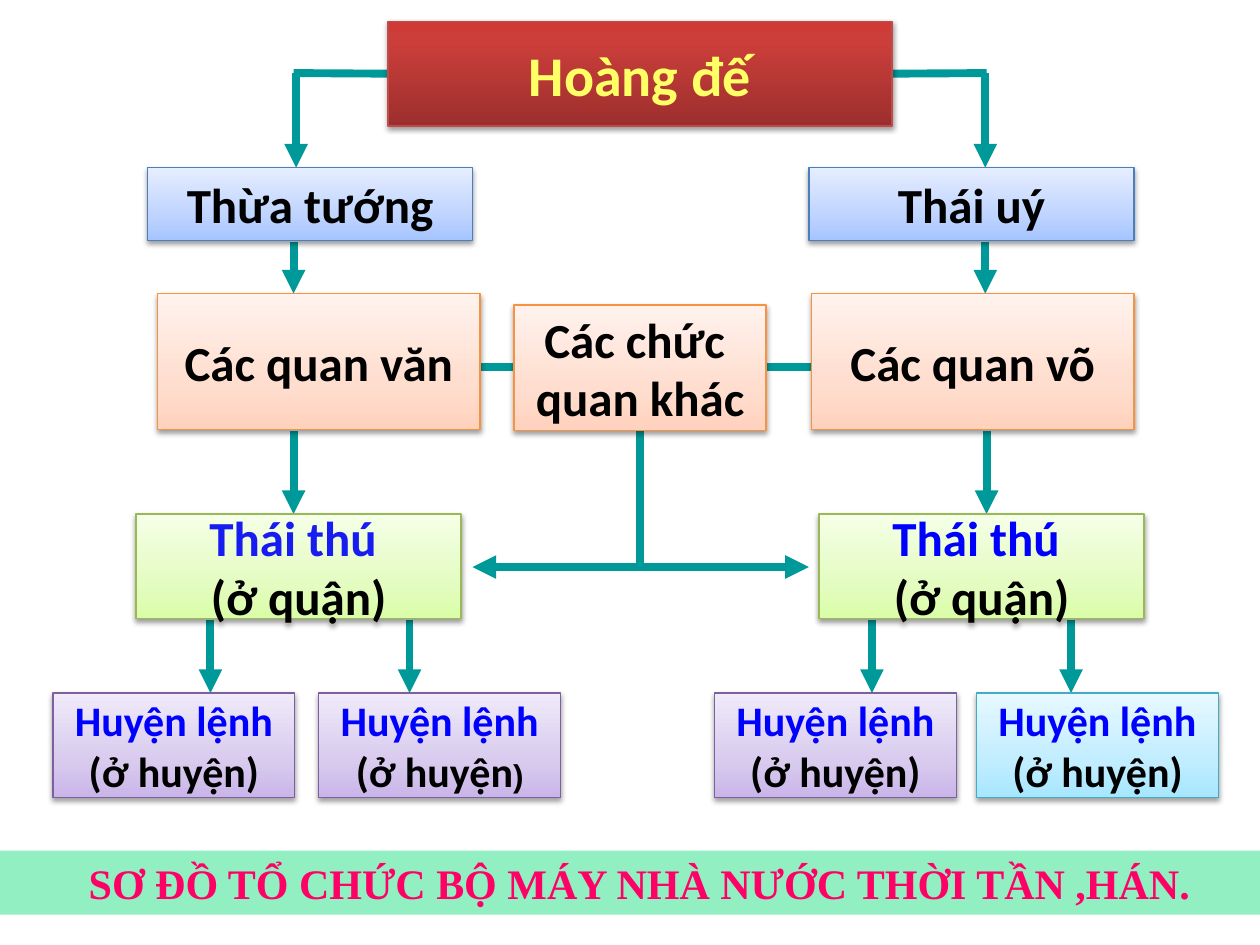
from copy import deepcopy

from lxml import etree
from pptx import Presentation
from pptx.dml.color import RGBColor
from pptx.enum.shapes import MSO_CONNECTOR, MSO_SHAPE
from pptx.enum.text import MSO_ANCHOR, MSO_AUTO_SIZE, PP_ALIGN
from pptx.oxml.ns import qn
from pptx.util import Inches, Pt

RECTANGLE = MSO_SHAPE.RECTANGLE
STRAIGHT = MSO_CONNECTOR.STRAIGHT
MIDDLE = MSO_ANCHOR.MIDDLE
CENTER = PP_ALIGN.CENTER
NO_AUTOFIT = MSO_AUTO_SIZE.NONE

BLACK, BLUE, TEAL = "000000", "0000FF", "009999"

# Gradient stops run from the bottom edge to the top edge.
RED_STYLE = ("BF4C48", ((0, "9C2F2D"), (0.8, "CB3E3A"), (1, "CE3B37")))
BLUE_STYLE = ("4B7EBC", ((0, "A4C4FF"), (0.35, "BFD4FF"), (1, "E6EEFF")))
ORANGE_STYLE = ("F69240", ((0, "FFD2BD"), (0.35, "FFDED0"), (1, "FFF2ED")))
GREEN_STYLE = ("98B955", ((0, "DAFDA7"), (0.35, "E4FCC2"), (1, "F5FFE7")))
PURPLE_STYLE = ("7D60A0", ((0, "C9B5E8"), (0.35, "D8CBEE"), (1, "F0EAF9")))
CYAN_STYLE = ("46AAC5", ((0, "A7E6FF"), (0.35, "C1EDFF"), (1, "E7F8FF")))


def rgb(hex_colour):
    return RGBColor.from_string(hex_colour)


def write(paragraph, text, size=28, colour=BLACK, font="Calibri"):
    paragraph.alignment = CENTER
    run = paragraph.add_run()
    run.text = text
    run.font.size = Pt(size)
    run.font.name = font
    run.font.bold = True
    run.font.color.rgb = rgb(colour)


presentation = Presentation()
presentation.slide_width = Inches(10)
presentation.slide_height = Inches(7.5)
slide = presentation.slides.add_slide(presentation.slide_layouts[5])

caption = slide.shapes.title
caption.left, caption.top = Inches(0), Inches(6.75)
caption.width, caption.height = Inches(10), Inches(0.51)
caption.fill.solid()
caption.fill.fore_color.rgb = rgb("91EFC2")
caption.text_frame.auto_size = NO_AUTOFIT
caption.text_frame.word_wrap = True
caption.text_frame.vertical_anchor = MIDDLE
caption.text_frame.margin_left = Inches(0.25)
write(caption.text_frame.paragraphs[0],
      "SƠ ĐỒ TỔ CHỨC BỘ MÁY NHÀ NƯỚC THỜI TẦN ,HÁN.",
      size=24, colour="FF0066", font="Times New Roman")

plain_links = [
    (3.08, 0.58, 2.33, 0.58),
    (7.83, 0.58, 7.08, 0.58),
    (3.81, 2.91, 6.44, 2.91),
    (5.08, 2.58, 5.08, 4.5),
]
arrow_links = [
    (2.35, 0.58, 2.35, 1.33),
    (7.82, 0.58, 7.82, 1.33),
    (2.33, 1.92, 2.33, 2.33),
    (7.82, 1.92, 7.82, 2.33),
    (2.33, 3.42, 2.33, 4.08),
    (7.83, 3.42, 7.83, 4.08),
    (5.08, 4.5, 6.42, 4.5),
    (5.08, 4.5, 3.75, 4.5),
] + [(x, 4.92, x, 5.5) for x in (1.67, 3.25, 6.92, 8.5)]

links = []
for ends in plain_links + arrow_links:
    link = slide.shapes.add_connector(STRAIGHT, *[Inches(value) for value in ends])
    link.line.color.rgb = rgb(TEAL)
    link.line.width = Pt(4.5)
    if ends in arrow_links:
        etree.SubElement(link.line._get_or_add_ln(), qn("a:tailEnd"), type="triangle")
    etree.SubElement(link._element.spPr, qn("a:effectLst"))
    links.append(link)

county_name = [("Huyện lệnh", {"size": 24, "colour": BLUE})]
county_place = [("(ở huyện)", {"size": 24})]
county_place_small = [("(ở huyện", {"size": 24}), (")", {"size": 18, "font": "Arial"})]
commandery_place = [("(ở quận)", {})]

offices = [
    (3.08, 0.17, 4, 0.83, RED_STYLE, [[("Hoàng đế", {"size": 32, "colour": "FFFF66"})]]),
    (1.17, 1.33, 2.58, 0.58, BLUE_STYLE, [[("Thừa tướng", {})]]),
    (6.42, 1.33, 2.58, 0.58, BLUE_STYLE, [[("Thái uý", {})]]),
    (1.25, 2.33, 2.56, 1.08, ORANGE_STYLE, [[("Các quan văn", {})]]),
    (6.44, 2.33, 2.56, 1.08, ORANGE_STYLE, [[("Các quan võ", {})]]),
    (4.08, 2.42, 2, 1, ORANGE_STYLE, [[("Các chức ", {})], [("quan khác", {})]]),
    (1.08, 4.08, 2.58, 0.83, GREEN_STYLE,
     [[("Thái thú ", {"colour": "171CF1"})], commandery_place]),
    (6.5, 4.08, 2.58, 0.83, GREEN_STYLE,
     [[("Thái thú ", {"colour": BLUE})], commandery_place]),
    (0.42, 5.5, 1.92, 0.83, PURPLE_STYLE, [county_name, county_place]),
    (2.53, 5.5, 1.92, 0.83, PURPLE_STYLE, [county_name, county_place_small]),
    (5.67, 5.5, 1.92, 0.83, PURPLE_STYLE, [county_name, county_place]),
    (7.75, 5.5, 1.92, 0.83, CYAN_STYLE, [county_name, county_place]),
]

office_boxes = []
for left, top, width, height, (border, stops), lines in offices:
    office = slide.shapes.add_shape(
        RECTANGLE, Inches(left), Inches(top), Inches(width), Inches(height))
    office.line.color.rgb = rgb(border)
    office.line.width = Pt(0.75)

    office.fill.gradient()
    office.fill.gradient_angle = 90
    stop_list = office._element.spPr.find(".//" + qn("a:gsLst"))
    stop_list.append(deepcopy(stop_list[-1]))
    for stop, (position, colour) in zip(office.fill.gradient_stops, stops):
        stop.position = position
        stop.color.rgb = rgb(colour)

    office.shadow.inherit = False
    effects = office._element.spPr.find(qn("a:effectLst"))
    shadow = etree.SubElement(effects, qn("a:outerShdw"), blurRad="40000",
                              dist="20000", dir="5400000", rotWithShape="0")
    shade = etree.SubElement(shadow, qn("a:srgbClr"), val=BLACK)
    etree.SubElement(shade, qn("a:alpha"), val="38000")

    frame = office.text_frame
    frame.word_wrap = False
    frame.vertical_anchor = MIDDLE
    for number, line in enumerate(lines):
        paragraph = frame.add_paragraph() if number else frame.paragraphs[0]
        for text, style in line:
            write(paragraph, text, **style)
    office_boxes.append(office)

emperor = office_boxes[0]
links[0].begin_connect(emperor, 1)
links[1].end_connect(emperor, 3)

presentation.save("out.pptx")
